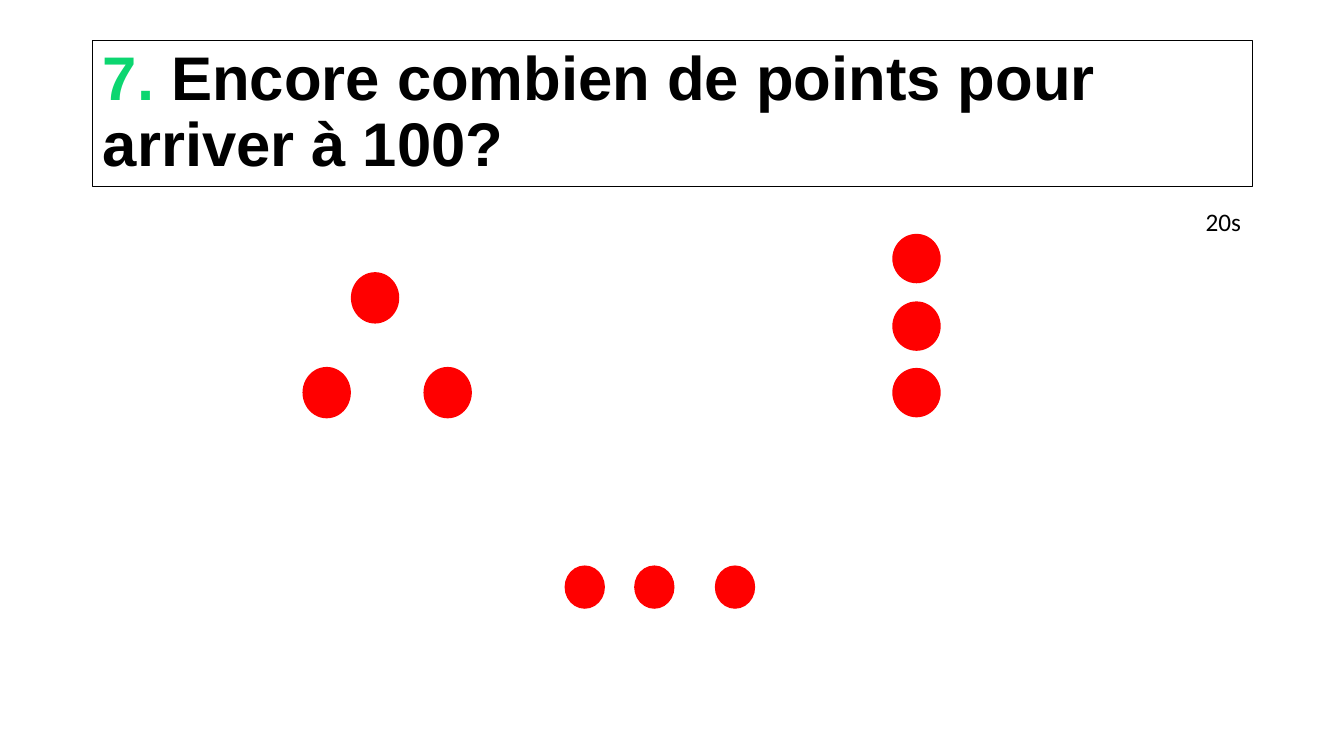
from pptx import Presentation
from pptx.dml.color import RGBColor
from pptx.enum.shapes import MSO_SHAPE
from pptx.enum.text import MSO_ANCHOR, MSO_AUTO_SIZE, PP_ALIGN
from pptx.util import Inches, Pt

OVAL = MSO_SHAPE.OVAL
LEFT = PP_ALIGN.LEFT
MIDDLE = MSO_ANCHOR.MIDDLE
NO_FIT, GROW = MSO_AUTO_SIZE.NONE, MSO_AUTO_SIZE.SHAPE_TO_FIT_TEXT
TITLE_ONLY = 5

COLORS = {"number": "0CD670", "text": "000000", "dot": "FF0000"}

# Each group: left, top, dot size, then dot offsets from the group's corner
DOT_GROUPS = [
    (3, 2.7, (0.48, 0.51), [(0.48, 0), (0, 0.94), (1.2, 0.94)]),
    (8.85, 2.32, (0.48, 0.49), [(0, 0), (0, 0.67), (0, 1.33)]),
    (5.6, 5.61, (0.4, 0.43), [(0, 0), (0.69, 0), (1.49, 0)]),
]


def rgb(name):
    return RGBColor.from_string(COLORS[name])


def add_text(paragraph, text, font="Calibri", size=18, color="text", bold=False):
    run = paragraph.add_run()
    run.text = text
    run.font.name = font
    run.font.size = Pt(size)
    run.font.bold = bold
    run.font.color.rgb = rgb(color)


def place_title(slide, left, top, width, height):
    title = slide.shapes.title
    title.left, title.top = Inches(left), Inches(top)
    title.width, title.height = Inches(width), Inches(height)
    title.line.color.rgb = rgb("text")
    title.line.width = Pt(0.75)
    frame = title.text_frame
    frame.word_wrap = True
    frame.auto_size = NO_FIT
    frame.vertical_anchor = MIDDLE
    question = frame.paragraphs[0]
    question.alignment = LEFT
    question.line_spacing = 0.9
    heading = {"font": "Arial", "size": 44, "bold": True}
    add_text(question, "7.", color="number", **heading)
    add_text(question, " Encore combien de points pour arriver à 100?", **heading)


def add_time_limit(slide, left, top, width, height):
    time_limit = slide.shapes.add_textbox(
        Inches(left), Inches(top), Inches(width), Inches(height))
    frame = time_limit.text_frame
    frame.word_wrap = False
    frame.auto_size = GROW
    add_text(frame.paragraphs[0], "20s")


def add_dot_group(slide, left, top, size, offsets):
    group = slide.shapes.add_group_shape()
    width, height = size
    for dx, dy in offsets:
        dot = group.shapes.add_shape(
            OVAL, Inches(left + dx), Inches(top + dy), Inches(width), Inches(height))
        dot.shadow.inherit = False
        dot.fill.solid()
        dot.fill.fore_color.rgb = rgb("dot")
        dot.line.fill.background()


def main():
    prs = Presentation()
    prs.slide_width, prs.slide_height = Inches(13.33), Inches(7.5)
    slide = prs.slides.add_slide(prs.slide_layouts[TITLE_ONLY])
    for dot_group in DOT_GROUPS:
        add_dot_group(slide, *dot_group)
    place_title(slide, 0.92, 0.4, 11.5, 1.45)
    add_time_limit(slide, 11.86, 2, 0.56, 0.4)
    prs.save("out.pptx")


if __name__ == "__main__":
    main()
